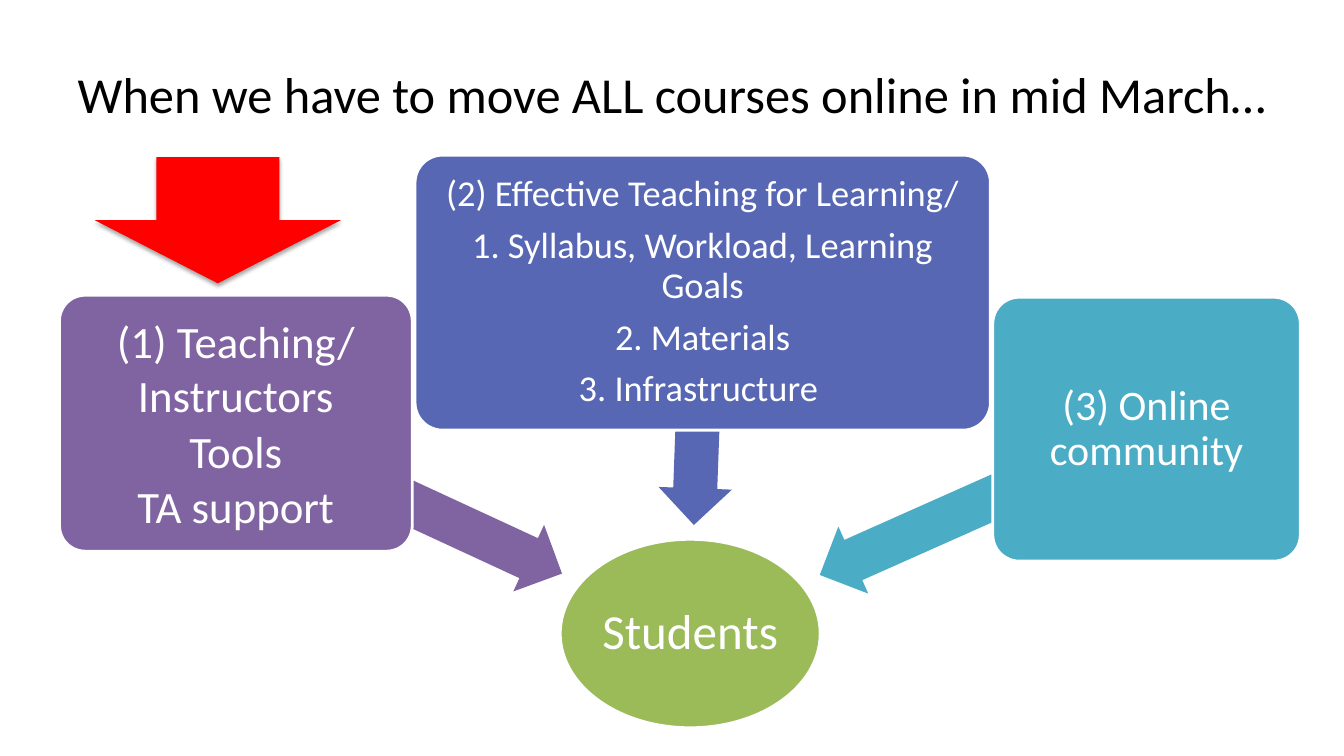
from lxml import etree
from pptx import Presentation
from pptx.dml.color import RGBColor
from pptx.enum.shapes import MSO_SHAPE as Kind
from pptx.enum.text import MSO_ANCHOR as Anchor, MSO_AUTO_SIZE as AutoSize, PP_ALIGN as Align
from pptx.oxml.ns import qn
from pptx.util import Cm, Pt

COLOURS = {
    "black": "000000", "white": "FFFFFF", "red": "FF0000", "green": "9BBB59",
    "purple": "8064A2", "indigo": "5767B4", "teal": "4BACC6",
}


def add_figure(kind, place, colour, outlined=False):
    shape = page.shapes.add_shape(kind, *[Cm(length) for length in place])
    shape.shadow.inherit = False
    shape.fill.solid()
    shape.fill.fore_color.rgb = RGBColor.from_string(COLOURS[colour])
    if outlined:
        shape.line.color.rgb = RGBColor.from_string(COLOURS["white"])
        shape.line.width = Pt(2)
    else:
        shape.line.fill.background()
    return shape


def write_centred(shape, lines, size, colour, inset=0, spacing=1, after=0):
    box = shape.text_frame
    box.text = "\n".join(lines)
    box.word_wrap = True
    box.auto_size = AutoSize.NONE
    box.vertical_anchor = Anchor.MIDDLE
    box.margin_left = box.margin_right = box.margin_top = box.margin_bottom = Cm(inset)
    for para in box.paragraphs:
        para.alignment = Align.CENTER
        para.line_spacing = spacing
        para.space_before = Pt(0)
        para.space_after = Pt(after)
        for span in para.runs:
            span.font.name = "Calibri"
            span.font.size = Pt(size)
            span.font.color.rgb = RGBColor.from_string(COLOURS[colour])


deck = Presentation()
deck.slide_width, deck.slide_height = Cm(33.87), Cm(19.05)
page = deck.slides.add_slide(deck.slide_layouts[5])

# Title
title = page.shapes.title
title.left, title.top, title.width, title.height = Cm(1.7), Cm(0.76), Cm(30.48), Cm(3.18)
write_centred(title, ["When we have to move ALL courses online in mid March…"], 36, "black")

# Students in the centre
students = add_figure(Kind.OVAL, (14.12, 13.59, 6.55, 4.75), "green", outlined=True)
write_centred(students, ["Students"], 35, "white", 0.05, 0.9)

# Three supports, each with an arrow to the students:
# colour, arrow place, arrow rotation, box place, lines, size, inset, spacing, space after
supports = [
    ("purple", (5.54, 11.63, 9.04, 1.85), 204.8, (1.5, 7.44, 8.89, 6.45),
     ["(1) Teaching/ Instructors", "Tools", "TA support"], 32, 0.18, 1, 1.4),
    ("indigo", (14.66, 9.37, 5.87, 1.85), 272.1, (10.46, 3.91, 14.5, 6.93),
     ["(2) Effective Teaching for Learning/", "1. Syllabus, Workload, Learning Goals",
      "2. Materials", "3. Infrastructure "], 26, 0.13, 0.9, 9),
    ("teal", (20.27, 11.73, 9.02, 1.85), 336, (25.02, 7.49, 7.75, 6.65),
     ["(3) Online community"], 30, 0.15, 0.9, 0),
]
for colour, arrow_place, rotation, box_place, lines, size, inset, spacing, after in supports:
    arrow = add_figure(Kind.LEFT_ARROW, arrow_place, colour)
    arrow.adjustments[0] = 0.6
    arrow.adjustments[1] = 0.5
    arrow.rotation = rotation
    support = add_figure(Kind.ROUNDED_RECTANGLE, box_place, colour, outlined=True)
    support.adjustments[0] = 0.1
    write_centred(support, lines, size, "white", inset, spacing, after)

# Red pointer with a soft shadow
pointer = add_figure(Kind.DOWN_ARROW, (2.39, 3.96, 6.2, 3.18), "red")
effects = pointer.element.spPr.find(qn("a:effectLst"))
shadow = etree.SubElement(effects, qn("a:outerShdw"), blurRad=str(Pt(3.1)),
                          dist=str(Pt(1.8)), dir="5400000", rotWithShape="0")
shade = etree.SubElement(shadow, qn("a:srgbClr"), val=COLOURS["black"])
etree.SubElement(shade, qn("a:alpha"), val="35000")

deck.save("out.pptx")
